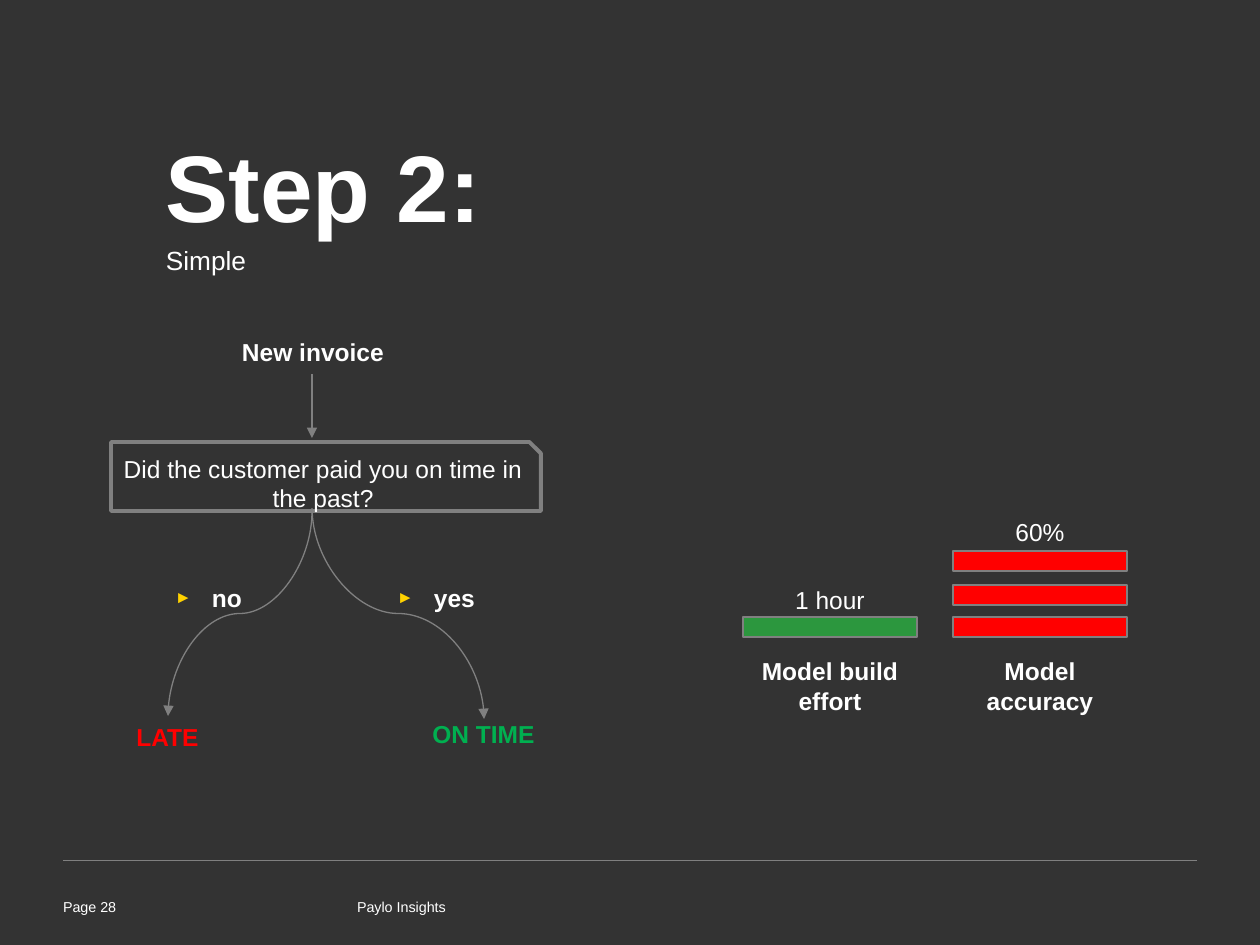
import pptx
import pptx.util
import pptx.dml.color
import pptx.enum.shapes
import pptx.enum.text
import pptx.oxml.ns
import lxml.etree

RGB = pptx.dml.color.RGBColor
SHAPE = pptx.enum.shapes.MSO_SHAPE
LINK = pptx.enum.shapes.MSO_CONNECTOR
ALIGN = pptx.enum.text.PP_ALIGN
DARK = RGB(0x33, 0x33, 0x33)
WHITE = RGB(0xFF, 0xFF, 0xFF)
GREY = RGB(0x80, 0x80, 0x80)
RED = RGB(0xFF, 0x00, 0x00)
GREEN = RGB(0x2C, 0x97, 0x3E)
LIME = RGB(0x00, 0xB0, 0x50)
GOLD = "FFD200"

# Boxes are (left, top, width, height) in px
FOOTER = [("Page 28", (63, 898, 92, 28)), ("Paylo Insights", (357, 898, 474, 28))]
TITLE = [("Step 2:", 54, True), ("Simple", 15, False)]
TITLE_BOX = (166, 141, 1084, 137)
QUESTION = "Did the customer paid you on time in the past?"
QUESTION_BOX = (111, 442, 430, 69)
START = ("New invoice", (188, 331, 250, 42))
ANSWERS = [("no", 175), ("yes", 397)]
RESULTS = [("LATE", (111, 722, 113, 33), RED), ("ON TIME", (427, 720, 113, 33), LIME)]
STEM = 312
BRANCHES = [((STEM, 508), (484, 719)), ((STEM, 511), (168, 716))]
# Label, value, left, value top, bar tops, colour
BARS = [
    ("Model build effort", "1 hour", 743, 585, [617], GREEN),
    ("Model accuracy", "60%", 953, 518, [617, 585, 551], RED),
]
BAR_W, BAR_H = 174, 20
SCALE = 914400 / 126


def px(n):
    return pptx.util.Emu(round(n * SCALE))


def add(parent, tag, **attrs):
    node = lxml.etree.SubElement(parent, pptx.oxml.ns.qn(tag))
    for key, value in attrs.items():
        node.set(key, value)
    return node


def style(para, size, bold=False, color=WHITE, align=None):
    para.alignment = align
    font = para.font
    font.name, font.size, font.bold = "Arial", pptx.util.Pt(size), bold
    font.color.rgb = color


def tight(para):
    para.line_spacing = 0.85
    para.space_after = pptx.util.Pt(4.5)


def bullet(para):
    props = para._p.get_or_add_pPr()
    indent = px(37)
    props.set("marL", str(indent))
    props.set("indent", str(-indent))
    add(add(props, "a:buClr"), "a:srgbClr", val=GOLD)
    add(props, "a:buSzPct", val="70000")
    add(props, "a:buFont", typeface="Arial")
    add(props, "a:buChar", char="►")


def text_frame(slide, box, insets=None):
    frame = slide.shapes.add_textbox(*map(px, box)).text_frame
    frame.word_wrap = True
    if insets:
        (frame.margin_left, frame.margin_top,
         frame.margin_right, frame.margin_bottom) = map(px, insets)
    return frame


def label(slide, text, box, size=14, bold=True, color=WHITE,
          align=ALIGN.CENTER, insets=None):
    """Add a one-paragraph text box and return its paragraph."""
    para = text_frame(slide, box, insets).paragraphs[0]
    para.text = text
    style(para, size, bold, color, align)
    return para


def snug(slide, text, box, **look):
    para = label(slide, text, box, insets=(0, 4, 0, 0), **look)
    tight(para)
    return para


def block(slide, kind, box, fill=None, width=0.75):
    shape = slide.shapes.add_shape(kind, *map(px, box))
    shape.shadow.inherit = False
    if fill is None:
        shape.fill.background()
    else:
        shape.fill.solid()
        shape.fill.fore_color.rgb = fill
    shape.line.color.rgb = GREY
    shape.line.width = pptx.util.Pt(width)
    return shape


def link(slide, kind, start, end, width=0.75, arrow=True):
    line = slide.shapes.add_connector(kind, *map(px, start + end))
    line.line.color.rgb = GREY
    line.line.width = pptx.util.Pt(width)
    if arrow:
        add(line.line._get_or_add_ln(), "a:tailEnd", type="triangle")
    add(line._element.spPr, "a:effectLst")
    return line


def branch(slide, start, end):
    """Draw a curve that leaves and arrives vertically: a turned connector."""
    (x0, y0), (x1, y1) = start, end
    long, wide = y1 - y0, abs(x1 - x0)
    left, top = (x0 + x1 - long) / 2, (y0 + y1 - wide) / 2
    curve = link(slide, LINK.CURVE, (left, top), (left + long, top + wide))
    frame = curve._element.spPr.find(pptx.oxml.ns.qn("a:xfrm"))
    if x1 > x0:
        frame.set("rot", "16200000")
        frame.set("flipH", "1")
    else:
        frame.set("rot", "5400000")


def draw_frame(slide):
    for text, box in FOOTER:
        label(slide, text, box, size=8.2, bold=False, align=ALIGN.LEFT,
              insets=(0, 0, 0, 0))
    link(slide, LINK.STRAIGHT, (63, 860), (1197, 860), 0.25, arrow=False)
    frame = text_frame(slide, TITLE_BOX, (0, 4, 0, 0))
    for i, (text, size, bold) in enumerate(TITLE):
        para = frame.add_paragraph() if i else frame.paragraphs[0]
        para.text = text
        style(para, size, bold)
        tight(para)


def draw_tree(slide):
    box = block(slide, SHAPE.SNIP_1_RECTANGLE, QUESTION_BOX, width=2.25)
    frame = box.text_frame
    frame.word_wrap = True
    frame.vertical_anchor = pptx.enum.text.MSO_ANCHOR.TOP
    para = frame.paragraphs[0]
    para.text = QUESTION
    style(para, 14, align=ALIGN.CENTER)
    for start, end in BRANCHES:
        branch(slide, start, end)
    for text, left in ANSWERS:
        frame = text_frame(slide, (left, 583, 87, 33), (0, 4, 0, 0))
        para = frame.paragraphs[0]
        para.text = text
        bullet(para)
        style(para, 14, True)
        tight(para)
    for text, place, color in RESULTS:
        snug(slide, text, place, color=color)
    label(slide, *START)
    link(slide, LINK.STRAIGHT, (STEM, 374), (STEM, 438))


def draw_bars(slide):
    for name, value, left, top, tops, color in BARS:
        label(slide, name, (left, 650, BAR_W, 57))
        for y in tops:
            block(slide, SHAPE.RECTANGLE, (left, y, BAR_W, BAR_H), color)
        snug(slide, value, (left, top, BAR_W, 29), bold=False)


def main():
    deck = pptx.Presentation()
    deck.slide_width, deck.slide_height = px(1260), px(945)
    slide = deck.slides.add_slide(deck.slide_layouts[6])
    slide.background.fill.solid()
    slide.background.fill.fore_color.rgb = DARK
    draw_frame(slide)
    draw_tree(slide)
    draw_bars(slide)
    deck.save("out.pptx")


if __name__ == "__main__":
    main()
